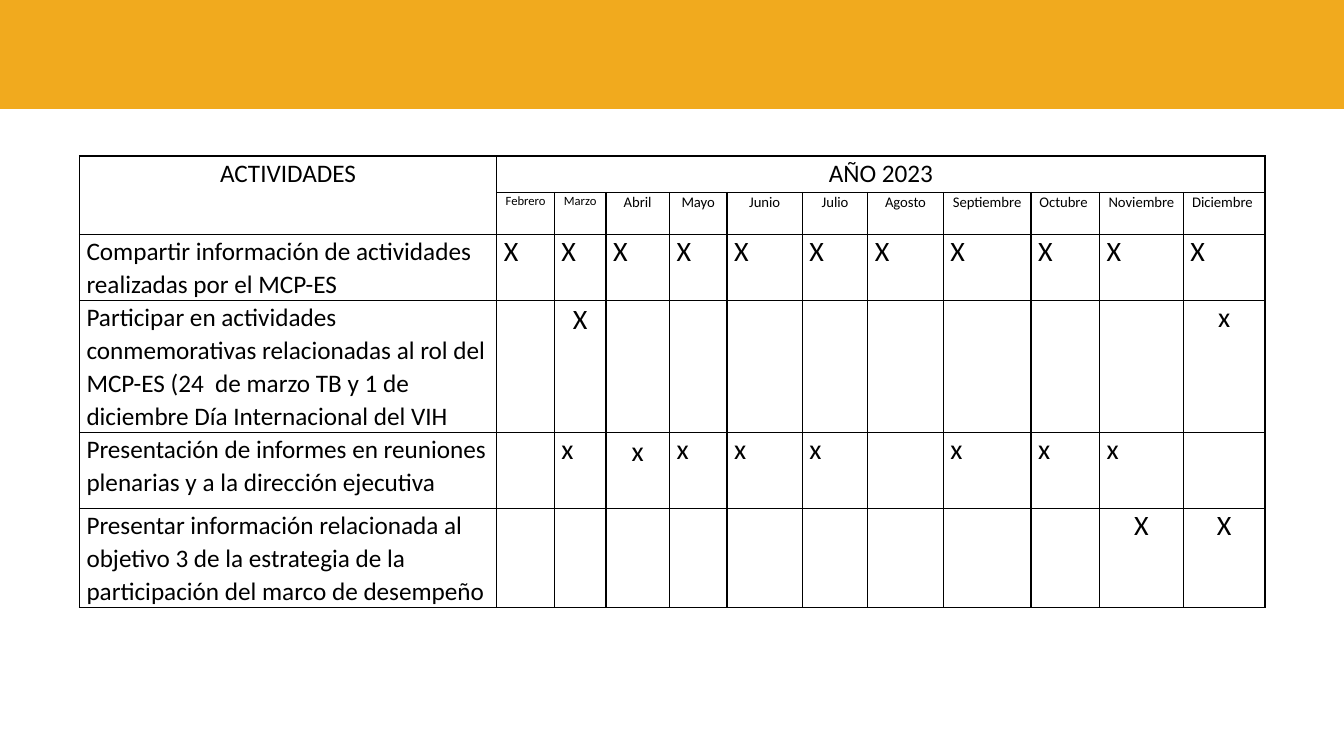
import pptx
import pptx.dml.color
import pptx.enum.shapes
import pptx.enum.text
import pptx.oxml.ns
import pptx.util
from lxml import etree

Cm, Pt = pptx.util.Cm, pptx.util.Pt
ALIGN = pptx.enum.text.PP_ALIGN

# Content
HEADINGS = ("ACTIVIDADES", "AÑO 2023")
MONTHS = ["Febrero", "Marzo", "Abril", "Mayo", "Junio", "Julio", "Agosto",
          "Septiembre", "Octubre ", "Noviembre", "Diciembre "]
SMALL_MONTHS = ("Febrero", "Marzo")
# Activity, mark per month, layout per month (l left, c centred, s centred and spaced)
ACTIVITIES = [
    ("Compartir información de actividades realizadas por el MCP-ES",
     "XXXXXXXXXXX", "lllllllllll"),
    ("Participar en actividades conmemorativas relacionadas al rol del MCP-ES "
     "(24  de marzo TB y 1 de diciembre Día Internacional del VIH",
     ".X........x", ".s........c"),
    ("Presentación de informes en reuniones plenarias y a la dirección ejecutiva",
     ".xxxxx.xxx.", ".lslll.lll."),
    ("Presentar información relacionada al objetivo 3 de la estrategia de la "
     "participación del marco de desempeño",
     ".........XX", ".........cc"),
]

# Layout in centimetres
SLIDE = (33.87, 19.05)
BAND_HEIGHT = 2.74
TABLE_LEFT, TABLE_TOP = 2.0, 3.93
COLUMNS = [10.52, 1.45, 1.3, 1.6, 1.45, 1.9, 1.65, 1.9, 2.21, 1.73, 2.11, 2.06]
ROWS = [0.92, 1.06, 1.66, 3.33, 1.92, 2.49]
SIDE_MARGIN = 0.18

THEME = {
    "font": "Calibri", "band": "F1AA1E", "ink": "000000",
    "body": 18, "mark": 20, "month": 10.5, "small_month": 9,
    "line": 1, "spacing": 1.07, "after": 8,
}


def color(name):
    return pptx.dml.color.RGBColor.from_string(THEME[name])


def frame_cell(cell):
    tc_pr = cell._tc.get_or_add_tcPr()
    qn = pptx.oxml.ns.qn
    for side in ("a:lnL", "a:lnR", "a:lnT", "a:lnB"):
        ln = etree.SubElement(tc_pr, qn(side), w=str(Pt(THEME["line"])))
        fill = etree.SubElement(ln, qn("a:solidFill"))
        etree.SubElement(fill, qn("a:srgbClr"), val=THEME["ink"])
    cell.fill.background()
    cell.margin_left = cell.margin_right = Cm(SIDE_MARGIN)
    cell.margin_top = cell.margin_bottom = 0


def write(cell, text, size, centred=False, spaced=True):
    cell.text_frame.text = text
    p = cell.text_frame.paragraphs[0]
    p.alignment = ALIGN.CENTER if centred else ALIGN.LEFT
    if spaced:
        p.line_spacing = THEME["spacing"]
        p.space_after = Pt(THEME["after"])
    font = p.runs[0].font
    font.name, font.size = THEME["font"], Pt(THEME[size])
    font.color.rgb = color("ink")


prs = pptx.Presentation()
prs.slide_width, prs.slide_height = map(Cm, SLIDE)
s = prs.slides.add_slide(prs.slide_layouts[6])

# Table grid
table = s.shapes.add_table(len(ROWS), len(COLUMNS), Cm(TABLE_LEFT), Cm(TABLE_TOP),
                           Cm(sum(COLUMNS)), Cm(sum(ROWS))).table
table.first_row = table.horz_banding = False
for column, width in zip(table.columns, COLUMNS):
    column.width = Cm(width)
for row, height in zip(table.rows, ROWS):
    row.height = Cm(height)
for cell in table.iter_cells():
    frame_cell(cell)

# Headings
table.cell(0, 0).merge(table.cell(1, 0))
table.cell(0, 1).merge(table.cell(0, len(MONTHS)))
for col, heading in enumerate(HEADINGS):
    write(table.cell(0, col), heading, "body", centred=True)
for col, month in enumerate(MONTHS, 1):
    size = "small_month" if month in SMALL_MONTHS else "month"
    write(table.cell(1, col), month, size, centred=True)

# Activities and their months
for row, (activity, marks, layouts) in enumerate(ACTIVITIES, 2):
    write(table.cell(row, 0), activity, "body")
    for col, (mark, layout) in enumerate(zip(marks, layouts), 1):
        if mark != ".":
            write(table.cell(row, col), mark, "mark",
                  centred=layout in "cs", spaced=layout == "s")

# Top band
band = s.shapes.add_shape(pptx.enum.shapes.MSO_SHAPE.RECTANGLE, 0, 0,
                          prs.slide_width, Cm(BAND_HEIGHT))
band.shadow.inherit = False
band.fill.solid()
band.fill.fore_color.rgb = color("band")
band.line.color.rgb = color("band")
band.line.width = Pt(THEME["line"])

prs.save("out.pptx")
